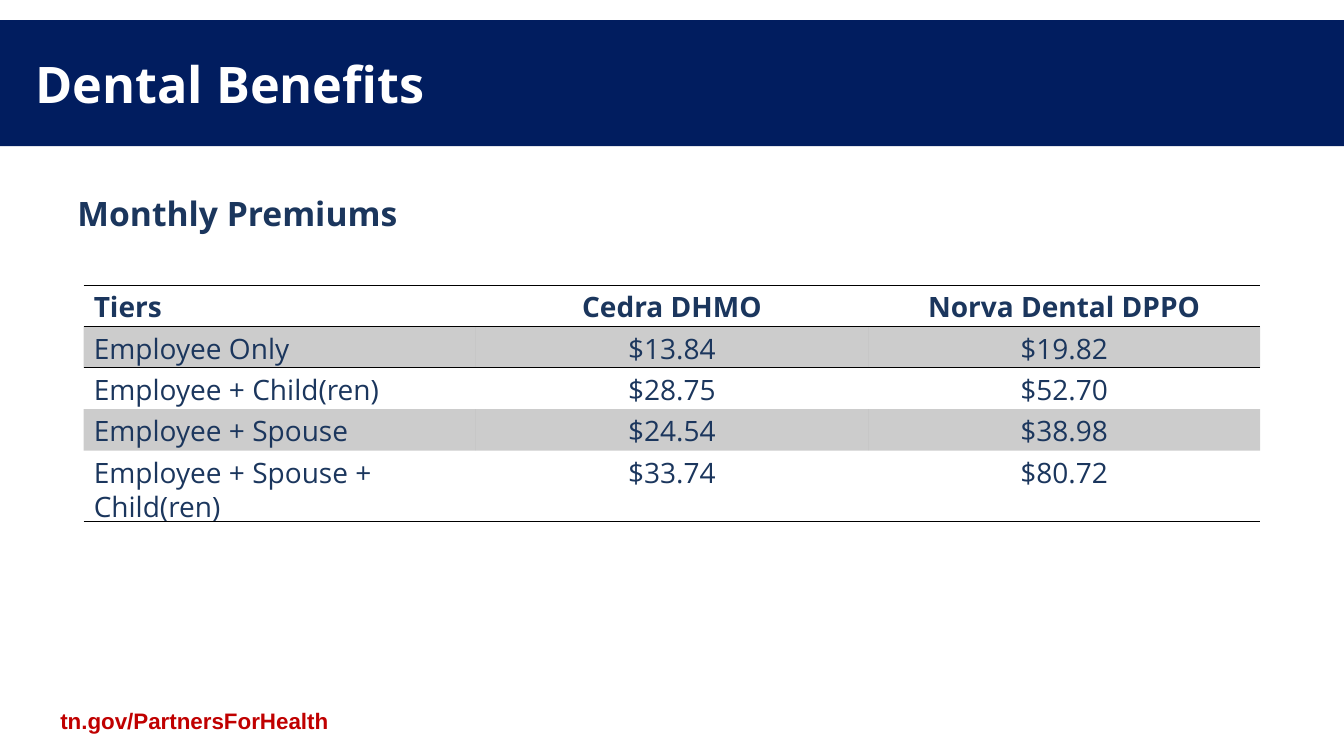
from dataclasses import dataclass

from lxml import etree
from pptx import Presentation
from pptx.dml import color
from pptx.enum import text
from pptx.oxml import ns
from pptx.util import Inches, Pt


@dataclass(frozen=True)
class Theme:
    banner: str = "011D5F"
    title: str = "FFFFFF"
    body: str = "1B365D"
    link: str = "C00000"
    rule: str = "000000"
    band: str = "000000"
    band_alpha: int = 20
    font: str = "Open Sans"
    link_font: str = "Arial"
    title_size: int = 36
    heading_size: int = 24
    table_size: int = 20
    link_size: int = 16


@dataclass(frozen=True)
class Label:
    wording: str
    left: float
    top: float
    width: float
    height: float
    font: str
    size: int
    color: str
    line_spacing: float = 1.0


THEME = Theme()
NO_STYLE = "{2D5ABB26-0587-4C30-8999-92F81FD0307C}"
LABELS = [
    Label("Monthly Premiums", 0.67, 1.86, 12, 0.6,
          THEME.font, THEME.heading_size, THEME.body),
    Label("tn.gov/PartnersForHealth", 0.5, 7, 4, 0.34,
          THEME.link_font, THEME.link_size, THEME.link, 0.9),
]
PREMIUMS = [
    ("Tiers", "Cedra DHMO", "Norva Dental DPPO"),
    ("Employee Only", "$13.84", "$19.82"),
    ("Employee + Child(ren)", "$28.75", "$52.70"),
    ("Employee + Spouse", "$24.54", "$38.98"),
    ("Employee + Spouse + Child(ren)", "$33.74", "$80.72"),
]
ROW_HEIGHT, LAST_ROW_HEIGHT = 0.41, 0.68


def format_text(paragraph, font: str, size: int, rgb: str, bold: bool = True) -> None:
    for run in paragraph.runs:
        run.font.name = font
        run.font.size = Pt(size)
        run.font.bold = bold
        run.font.color.rgb = color.RGBColor.from_string(rgb)


def format_title(slide) -> None:
    title = slide.shapes.title
    title.left, title.top = Inches(0), Inches(0.2)
    title.width, title.height = Inches(13.33), Inches(1.25)
    title.fill.solid()
    title.fill.fore_color.rgb = color.RGBColor.from_string(THEME.banner)
    frame = title.text_frame
    frame.text = "Dental Benefits"
    frame.margin_left = Inches(0.35)
    frame.vertical_anchor = text.MSO_ANCHOR.MIDDLE
    frame.paragraphs[0].alignment = text.PP_ALIGN.LEFT
    format_text(frame.paragraphs[0], THEME.font, THEME.title_size, THEME.title)


def add_label(slide, label: Label) -> None:
    box = slide.shapes.add_textbox(Inches(label.left), Inches(label.top),
                                   Inches(label.width), Inches(label.height))
    frame = box.text_frame
    frame.word_wrap = True
    frame.text = label.wording
    frame.paragraphs[0].line_spacing = label.line_spacing
    format_text(frame.paragraphs[0], label.font, label.size, label.color)


def add_rule(cell, side: str, position: int) -> None:
    """Borders must come before the fill in the cell properties."""
    line = etree.Element(ns.qn(f"a:{side}"), w=str(Pt(1)))
    fill = etree.SubElement(line, ns.qn("a:solidFill"))
    etree.SubElement(fill, ns.qn("a:srgbClr"), val=THEME.rule)
    cell._tc.get_or_add_tcPr().insert(position, line)


def format_cell(cell, wording: str, row: int, column: int) -> None:
    cell.text = wording
    paragraph = cell.text_frame.paragraphs[0]
    paragraph.line_spacing = 0.9
    paragraph.alignment = text.PP_ALIGN.CENTER if column else text.PP_ALIGN.LEFT
    format_text(paragraph, THEME.font, THEME.table_size, THEME.body, bold=row == 0)

    # Odd rows carry a translucent band
    if row % 2:
        cell.fill.solid()
        cell.fill.fore_color.rgb = color.RGBColor.from_string(THEME.band)
        band = cell._tc.tcPr.find(".//" + ns.qn("a:srgbClr"))
        etree.SubElement(band, ns.qn("a:alpha"), val=str(THEME.band_alpha * 1000))
    else:
        cell.fill.background()

    # Rules frame the header and close the table
    sides = {0: ["lnT", "lnB"], 1: ["lnT"], len(PREMIUMS) - 1: ["lnB"]}
    for position, side in enumerate(sides.get(row, [])):
        add_rule(cell, side, position)


def add_premium_table(slide) -> None:
    row_count, column_count = len(PREMIUMS), len(PREMIUMS[0])
    height = ROW_HEIGHT * (row_count - 1) + LAST_ROW_HEIGHT
    table = slide.shapes.add_table(row_count, column_count, Inches(0.83), Inches(2.83),
                                   Inches(11.67), Inches(height)).table
    table.first_row = table.horz_banding = False
    table._tbl.tblPr.find(ns.qn("a:tableStyleId")).text = NO_STYLE
    for row, wordings in enumerate(PREMIUMS):
        is_last = row == row_count - 1
        table.rows[row].height = Inches(LAST_ROW_HEIGHT if is_last else ROW_HEIGHT)
        for column, wording in enumerate(wordings):
            format_cell(table.cell(row, column), wording, row, column)


def main() -> None:
    presentation = Presentation()
    presentation.slide_width = Inches(13.33)
    presentation.slide_height = Inches(7.5)
    slide = presentation.slides.add_slide(presentation.slide_layouts[5])

    format_title(slide)
    for label in LABELS:
        add_label(slide, label)
    add_premium_table(slide)
    presentation.save("out.pptx")


if __name__ == "__main__":
    main()
